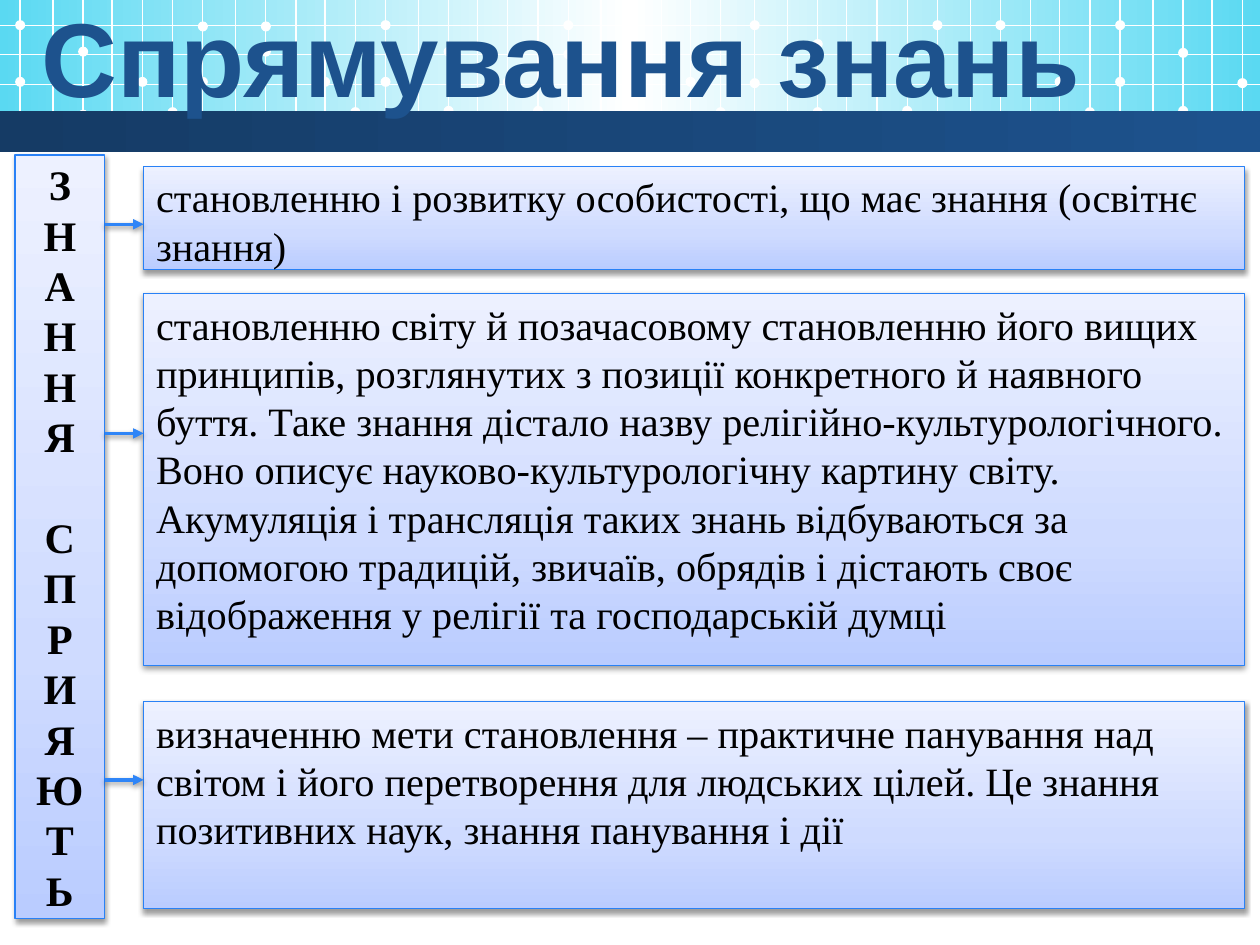
from lxml.etree import SubElement
from pptx import Presentation
from pptx.dml.color import RGBColor
from pptx.enum.shapes import MSO_CONNECTOR, MSO_SHAPE
from pptx.enum.text import MSO_ANCHOR, PP_ALIGN
from pptx.oxml.ns import qn
from pptx.util import Inches, Pt

WHITE = RGBColor(0xFF, 0xFF, 0xFF)
BLACK = RGBColor(0x00, 0x00, 0x00)
AQUA = RGBColor(0x5A, 0xD9, 0xF2)
NAVY = RGBColor(0x15, 0x3B, 0x65)
BLUE = RGBColor(0x1D, 0x52, 0x8D)
EDGE = RGBColor(0x29, 0x81, 0xF6)
ARROW = RGBColor(0x2F, 0x85, 0xF7)
PANEL = [(0, RGBColor(0xBA, 0xCC, 0xFF)), (35, RGBColor(0xCF, 0xDB, 0xFF)),
         (100, RGBColor(0xED, 0xF1, 0xFF))]

# The banner grid repeats in groups of twelve columns.
STARTS = [0.16, 3.06, 5.99, 8.89]
STEPS = [0, 0.26, 0.5, 0.73, 0.97, 1.21, 1.45, 1.71, 1.95, 2.19, 2.42, 2.66]
ROWS = [0.2, 0.43, 0.67, 0.89]
DOT_COLS = [0, 0, 2, 2, 4, 5, 6, 6, 8, 8, 10, 11]
DOT_ROWS = [
    [0.65, 0.2, 0.41, 0.91, 0.65, 0.89, 0.65, 0.21, 0.41, 0.21, 0.65, 0.89],
    [0.65, 0.2, 0.41, 0.88, 0.65, 0.88, 0.43, 0.2, 0.42, 0.2, 0.65, 0.89],
    [0.66, 0.2, 0.35, 0.89, 0.64, 0.88, 0.51, 0.2, 0.41, 0.2, 0.65, 0.89],
    [0.65, 0.2, 0.42, 0.88, 0.66],
]
DOT = 0.08

WORDS = ["ЗНАННЯ", "СПРИЯЮТЬ"]
# Top, height, arrow level and wording of each panel.
GOALS = [
    (1.32, 0.82, 1.78,
     "становленню і розвитку особистості, що має знання (освітнє знання)"),
    (2.33, 2.95, 3.44,
     "становленню світу й позачасовому становленню його вищих принципів, "
     "розглянутих з позиції конкретного й наявного буття. Таке знання дістало "
     "назву релігійно-культурологічного. Воно описує науково-культурологічну "
     "картину світу. Акумуляція і трансляція таких знань відбуваються за "
     "допомогою традицій, звичаїв, обрядів і дістають своє відображення у "
     "релігії та господарській думці"),
    (5.57, 1.64, 6.19,
     "визначенню мети становлення – практичне панування над світом і його "
     "перетворення для людських цілей. Це знання позитивних наук, знання "
     "панування і дії"),
]


def set_shadow(item, shown):
    """Replace the theme shadow by a soft one below the item, or by none."""
    effects = SubElement(item._element.spPr, qn("a:effectLst"))
    if shown:
        outer = SubElement(effects, qn("a:outerShdw"), blurRad=str(Pt(3.1)),
                           dist=str(Pt(1.6)), dir="5400000", rotWithShape="0")
        tint = SubElement(outer, qn("a:srgbClr"), val=str(BLACK))
        SubElement(tint, qn("a:alpha"), val="38000")


def set_gradient(shape, stops, angle):
    shape.fill.gradient()
    shape.fill.gradient_angle = angle
    holder = shape._element.spPr.find(".//" + qn("a:gsLst"))
    for old in list(holder):
        holder.remove(old)
    for place, color in stops:
        stop = SubElement(holder, qn("a:gs"), pos=str(place * 1000))
        SubElement(stop, qn("a:srgbClr"), val=str(color))


def add_block(slide, box, fill, kind=MSO_SHAPE.RECTANGLE, angle=0, line=None):
    """Add a shape; fill is a colour or a list of gradient stops."""
    shape = slide.shapes.add_shape(kind, *map(Inches, box))
    if isinstance(fill, list):
        set_gradient(shape, fill, angle)
    else:
        shape.fill.solid()
        shape.fill.fore_color.rgb = fill
    if line is None:
        shape.line.fill.background()
    else:
        shape.line.color.rgb = line
        shape.line.width = Pt(0.75)
    set_shadow(shape, line is not None)
    return shape


def add_line(slide, start, end, color=WHITE, width=0.75, arrow=False):
    line = slide.shapes.add_connector(MSO_CONNECTOR.STRAIGHT,
                                      *map(Inches, (*start, *end)))
    line.line.color.rgb = color
    line.line.width = Pt(width)
    if arrow:
        SubElement(line.line._get_or_add_ln(), qn("a:tailEnd"), type="triangle")
    set_shadow(line, arrow)


def write(shape, lines, font="Times New Roman", size=23, color=BLACK, bold=False,
          align=PP_ALIGN.LEFT, anchor=MSO_ANCHOR.TOP):
    frame = shape.text_frame
    frame.word_wrap = True
    frame.vertical_anchor = anchor
    frame.text = "\n".join(lines)
    for para in frame.paragraphs:
        para.alignment = align
        para.font.name = font
        para.font.size = Pt(size)
        para.font.color.rgb = color
        para.font.bold = bold


def add_banner(slide, left, top, width, height):
    add_block(slide, (left, top, width, height - 0.18),
              [(0, AQUA), (50, WHITE), (100, AQUA)])
    for start, levels in zip(STARTS, DOT_ROWS):
        for step in STEPS:
            x = left + start + step
            if x < left + width:
                add_line(slide, (x, top), (x, top + 1.1))
        for col, level in zip(DOT_COLS, levels):
            x = left + start + STEPS[col]
            add_block(slide, (x - DOT / 2, top + level - DOT / 2, DOT, DOT),
                      WHITE, kind=MSO_SHAPE.OVAL)
    for row in ROWS:
        add_line(slide, (left, top + row), (left + width, top + row))
    add_block(slide, (left, top + height - 0.33, width, 0.33),
              [(0, NAVY), (100, BLUE)])


def add_title(slide, left, top, width, height):
    title = slide.shapes.add_textbox(*map(Inches, (left, top, width, height)))
    write(title, ["Спрямування знань"], font="Arial", size=60, color=BLUE,
          bold=True, align=PP_ALIGN.CENTER)


def add_pillar(slide, left, top, width, height):
    """Stack the letters of the two words down one tall panel."""
    pillar = add_block(slide, (left, top, width, height), PANEL, angle=90, line=EDGE)
    write(pillar, "".join(WORDS), size=24, bold=True, align=PP_ALIGN.CENTER,
          anchor=MSO_ANCHOR.MIDDLE)
    second = pillar.text_frame.paragraphs[len(WORDS[0])]
    second.space_before = Pt(28.8)


def add_goals(slide, left, width, source):
    """Add the panels, each with an arrow from the source edge."""
    for top, height, level, text in GOALS:
        panel = add_block(slide, (left, top, width, height), PANEL,
                          angle=90, line=EDGE)
        write(panel, [text])
        add_line(slide, (source, level), (left, level), color=ARROW, width=2,
                 arrow=True)


def main():
    deck = Presentation()
    deck.slide_width, deck.slide_height = Inches(10), Inches(7.5)
    slide = deck.slides.add_slide(deck.slide_layouts[6])
    add_banner(slide, 0, 0, 10, 1.21)
    add_title(slide, -0.43, -0.11, 9.76, 1.11)
    add_pillar(slide, 0.12, 1.23, 0.71, 6.06)
    add_goals(slide, 1.14, 8.74, 0.83)
    deck.save("out.pptx")


if __name__ == "__main__":
    main()
